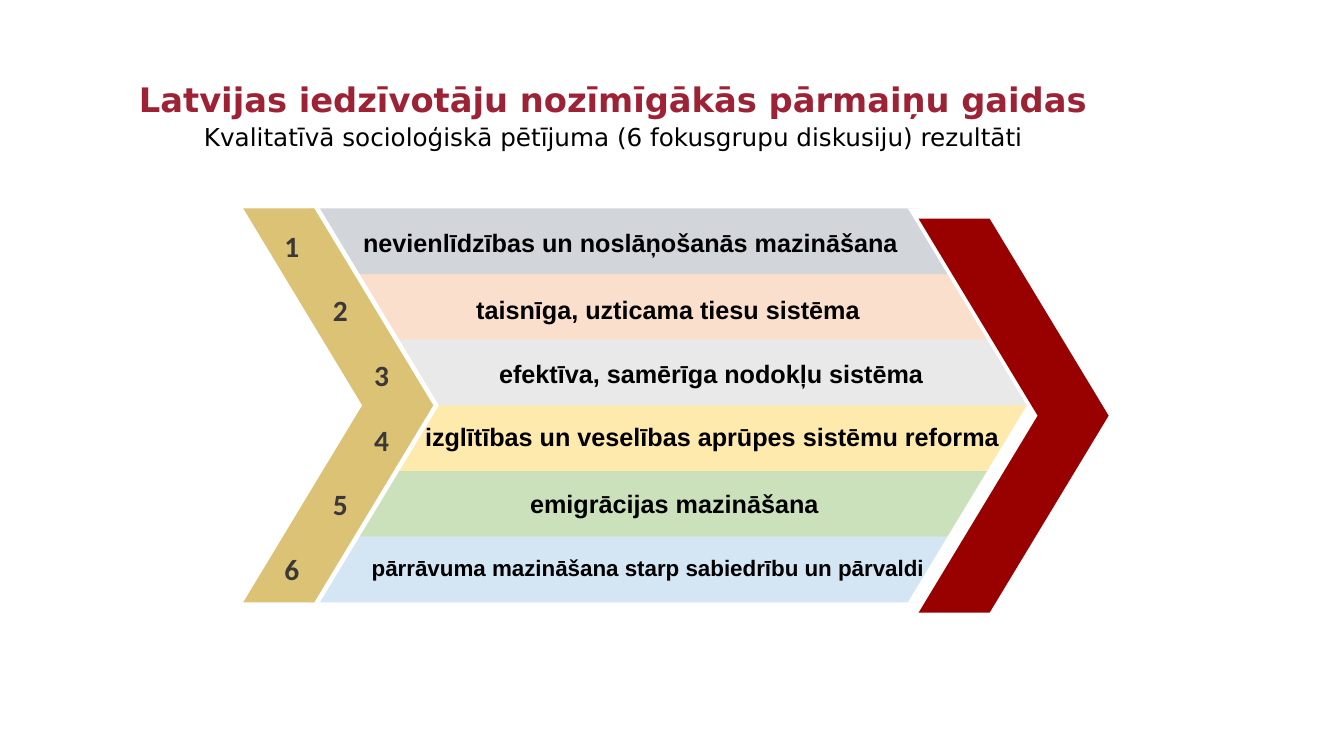
"""Builds a slide of six ranked expectations of change between two chevrons."""
from lxml.etree import SubElement
from pptx import Presentation
from pptx.dml.color import RGBColor
from pptx.enum.text import MSO_ANCHOR as Anchor, PP_ALIGN as Align
from pptx.oxml.ns import qn
from pptx.util import Cm, Pt

HEADING = [
    ("Latvijas iedzīvotāju nozīmīgākās pārmaiņu gaidas", 24.1, "9D2235", True),
    ("Kvalitatīvā socioloģiskā pētījuma (6 fokusgrupu diskusiju) rezultāti", 17.6, "000000", False),
]
# text, size, band colour, opacity in %, label left, label top, label width
EXPECTATIONS = [
    ("nevienlīdzības un noslāņošanās mazināšana", 18, "44546A", 24, 6.83, 5.79, 16.05),
    ("taisnīga, uzticama tiesu sistēma", 18, "ED7D31", 24, 6.73, 7.49, 15.19),
    ("efektīva, samērīga nodokļu sistēma", 18, "A5A5A5", 24, 5.87, 9.09, 17.65),
    ("izglītības un veselības aprūpes sistēmu reforma", 18, "FFC000", 32, 9.83, 10.69, 15.6),
    ("emigrācijas mazināšana", 18, "70AD47", 36, 5.97, 12.37, 14.91),
    ("pārrāvuma mazināšana starp sabiedrību un pārvaldi", 16, "5B9BD5", 26, 2.51, 13.95, 21.03),
]
CHEVRONS = [
    (6.27, 5.25, "FFFFFF", 100),
    (6.13, 5.25, "BF9000", 54),
    (22.88, 5.25, "FFFFFF", 100),
    (23.15, 5.51, "990000", 100),
]
NUMBER_LEFTS = [6.91, 8.13, 9.17]
BAND_LEFT, BAND_TOP, BAND_WIDTH, BAND_HEIGHT = 7.77, 5.25, 15.4, 1.655
CHEVRON_THICKNESS, CHEVRON_DEPTH = 1.79, 3


def colour(value):
    return RGBColor.from_string(value)


def add_polygon(slide, points, fill, opacity):
    corners = [(Cm(x), Cm(y)) for x, y in points]
    builder = slide.shapes.build_freeform(*corners[0])
    builder.add_line_segments(corners[1:], close=True)
    shape = builder.convert_to_shape()
    shape.shadow.inherit = False
    shape.line.fill.background()
    shape.fill.solid()
    shape.fill.fore_color.rgb = colour(fill)
    if opacity < 100:
        tint = shape.element.spPr.find(qn("a:solidFill"))[0]
        SubElement(tint, qn("a:alpha"), val=str(opacity * 1000))


def add_frame(slide, left, top, width, height, wrap=True):
    frame = slide.shapes.add_textbox(Cm(left), Cm(top), Cm(width), Cm(height)).text_frame
    frame.word_wrap = wrap
    frame.vertical_anchor = Anchor.MIDDLE
    frame.margin_top = frame.margin_bottom = 0
    return frame


def write(paragraph, text, size, font, fill, bold, align, spacing=None):
    paragraph.alignment = align
    paragraph.line_spacing = spacing
    run = paragraph.add_run()
    run.text = text
    run.font.size, run.font.name, run.font.bold = Pt(size), font, bold
    run.font.color.rgb = colour(fill)


def main():
    presentation = Presentation()
    presentation.slide_width, presentation.slide_height = Cm(33.87), Cm(19.05)
    slide = presentation.slides.add_slide(presentation.slide_layouts[6])
    count = len(EXPECTATIONS)

    for index, (_, _, fill, opacity, *_) in enumerate(EXPECTATIONS):
        upper, lower = [
            (BAND_LEFT + CHEVRON_DEPTH * min(edge, count - edge) / (count / 2),
             BAND_TOP + BAND_HEIGHT * edge)
            for edge in (index, index + 1)
        ]
        points = [upper, (upper[0] + BAND_WIDTH, upper[1]),
                  (lower[0] + BAND_WIDTH, lower[1]), lower]
        add_polygon(slide, points, fill, opacity)

    height = BAND_HEIGHT * count
    for left, top, fill, opacity in CHEVRONS:
        inner, outer = left + CHEVRON_DEPTH, left + CHEVRON_THICKNESS
        points = [(left, top), (outer, top), (inner + CHEVRON_THICKNESS, top + height / 2),
                  (outer, top + height), (left, top + height), (inner, top + height / 2)]
        add_polygon(slide, points, fill, opacity)

    for index, (text, size, _, _, left, top, width) in enumerate(EXPECTATIONS):
        label = add_frame(slide, left, top, width, 0.7)
        write(label.paragraphs[0], text, size, "Arial", "000000", True, Align.RIGHT, Pt(19.5))
        number_left = NUMBER_LEFTS[min(index, count - 1 - index)]
        number = add_frame(slide, number_left, 5.61 + 1.63 * index, 0.89, 1.14, wrap=False)
        write(number.paragraphs[0], str(index + 1), 21, "Calibri", "3B3838", True, Align.CENTER)

    heading = add_frame(slide, 0.86, 1.9, 29.21, 1.9)
    for index, (text, size, fill, bold) in enumerate(HEADING):
        paragraph = heading.add_paragraph() if index else heading.paragraphs[0]
        write(paragraph, text, size, "DejaVu Sans", fill, bold, Align.CENTER, 1.1)

    presentation.save("out.pptx")


if __name__ == "__main__":
    main()
